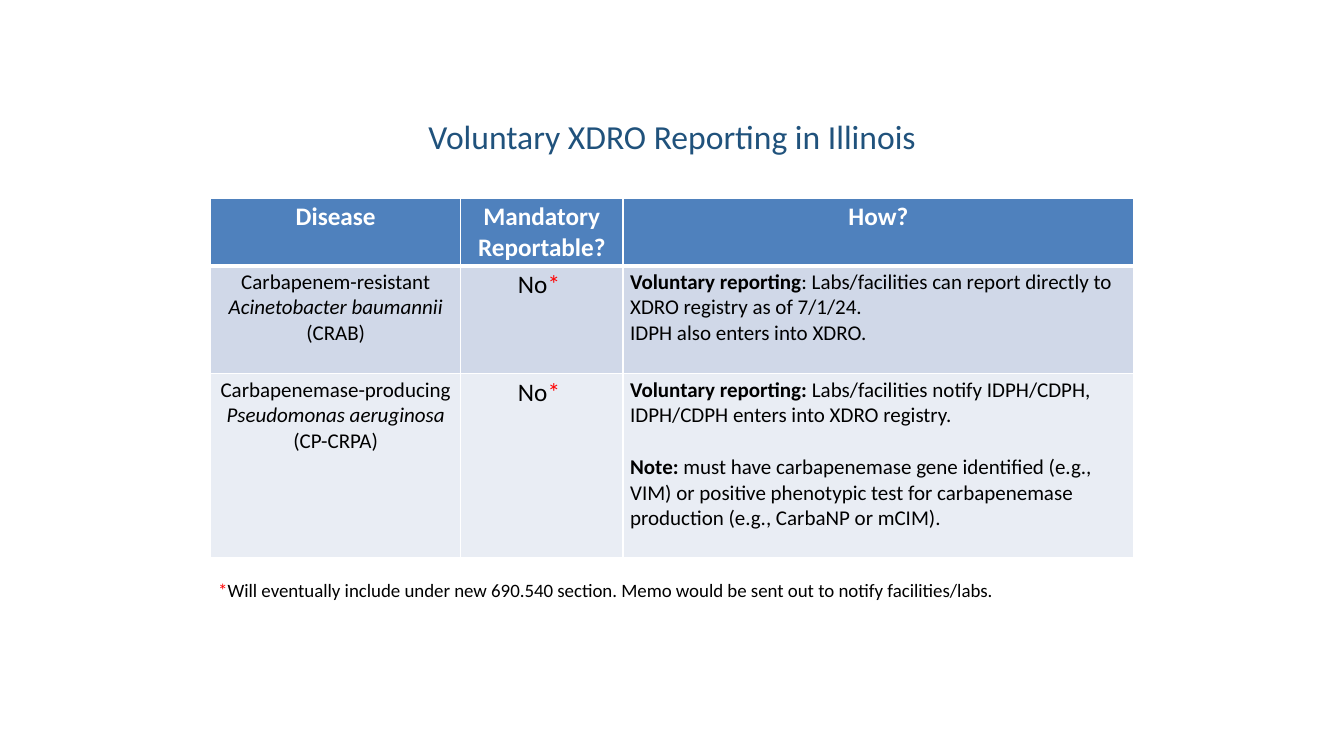
import pptx
import pptx.dml.color
import pptx.enum.text
import pptx.oxml
import pptx.oxml.ns
import pptx.util
from pptx.util import Cm

ALIGN = pptx.enum.text.PP_ALIGN
ANCHOR = pptx.enum.text.MSO_ANCHOR
WHITE, BLACK, RED, NAVY = "FFFFFF", "000000", "FF0000", "20527C"


def rgb(value):
    return pptx.dml.color.RGBColor.from_string(value)


def write(tf, paragraphs, align):
    """Fill a text frame; each run is (text, size, colour, style), style holding b or i."""
    for n, runs in enumerate(paragraphs):
        p = tf.add_paragraph() if n else tf.paragraphs[0]
        p.alignment = align
        for text, size, color, style in runs:
            r = p.add_run()
            r.text = text
            r.font.name = "Calibri"
            r.font.size = pptx.util.Pt(size)
            r.font.color.rgb = rgb(color)
            r.font.bold = "b" in style
            r.font.italic = "i" in style


prs = pptx.Presentation()
prs.slide_width, prs.slide_height = Cm(33.87), Cm(19.05)
s = prs.slides.add_slide(prs.slide_layouts[6])

title = s.shapes.add_textbox(Cm(5.51), Cm(2.39), Cm(22.86), Cm(2.06))
title.text_frame.word_wrap = True
title.text_frame.vertical_anchor = ANCHOR.MIDDLE
write(title.text_frame, [[("Voluntary XDRO Reporting in Illinois", 24, NAVY, "")]], ALIGN.CENTER)

header = [[[(name, 18, WHITE, "b")]] for name in ("Disease", "Mandatory Reportable?", "How?")]
not_mandatory = [[("No", 18, BLACK, ""), ("* ", 18, RED, "")]]
crab = [
    [[("Carbapenem-resistant ", 15, BLACK, ""),
      ("Acinetobacter baumannii ", 15, BLACK, "i"),
      ("(CRAB)", 15, BLACK, "")]],
    not_mandatory,
    [[("Voluntary reporting", 15, BLACK, "b"),
      (": Labs/facilities can report directly to XDRO registry as of 7/1/24.", 15, BLACK, "")],
     [("IDPH also enters into XDRO.", 15, BLACK, "")]],
]
crpa = [
    [[("Carbapenemase-producing ", 15, BLACK, ""), ("Pseudomonas aeruginosa", 15, BLACK, "i")],
     [("(CP-CRPA)", 15, BLACK, "")]],
    not_mandatory,
    [[("Voluntary reporting: ", 15, BLACK, "b"),
      ("Labs/facilities notify IDPH/CDPH, IDPH/CDPH enters into XDRO registry.", 15, BLACK, "")],
     [("Note: ", 15, BLACK, "b"),
      ("must have carbapenemase gene identified (e.g., VIM) or positive phenotypic test for "
       "carbapenemase production (e.g., CarbaNP or mCIM).", 15, BLACK, "")]],
]
rows = [(header, "4F81BD", 1.7), (crab, "D0D8E8", 2.72), (crpa, "E9EDF4", 4.62)]
widths = [6.3, 4.09, 12.87]

table = s.shapes.add_table(len(rows), len(widths), Cm(5.31), Cm(5), Cm(sum(widths)),
                           Cm(sum(height for _, _, height in rows))).table
for column, width in zip(table.columns, widths):
    column.width = Cm(width)
for i, (contents, fill, height) in enumerate(rows):
    table.rows[i].height = Cm(height)
    for j, paragraphs in enumerate(contents):
        cell = table.cell(i, j)
        cell.margin_left = cell.margin_right = Cm(0.18)
        cell.margin_top = cell.margin_bottom = Cm(0.08)
        tcPr = cell._tc.get_or_add_tcPr()
        for side in "LRTB":
            under_header = (i, side) in ((0, "B"), (1, "T"))
            tcPr.append(pptx.oxml.parse_xml(
                f'<a:ln{side} {pptx.oxml.ns.nsdecls("a")} w="{pptx.util.Pt(3 if under_header else 1)}">'
                f'<a:solidFill><a:srgbClr val="{WHITE}"/></a:solidFill></a:ln{side}>'))
        cell.fill.solid()
        cell.fill.fore_color.rgb = rgb(fill)
        write(cell.text_frame, paragraphs, ALIGN.LEFT if i and j == 2 else ALIGN.CENTER)
table.cell(2, 2).text_frame.paragraphs[1].space_before = pptx.util.Pt(18.5)

footnote = s.shapes.add_textbox(Cm(5.31), Cm(14.48), Cm(20.22), Cm(0.76))
tf = footnote.text_frame
tf.word_wrap = True
tf.margin_left = tf.margin_right = Cm(0.19)
tf.margin_top = tf.margin_bottom = Cm(0.1)
write(tf, [[("*", 13.5, RED, ""),
            ("Will eventually include under new 690.540 section. "
             "Memo would be sent out to notify facilities/labs.", 13.5, BLACK, "")]], ALIGN.LEFT)

prs.save("out.pptx")
